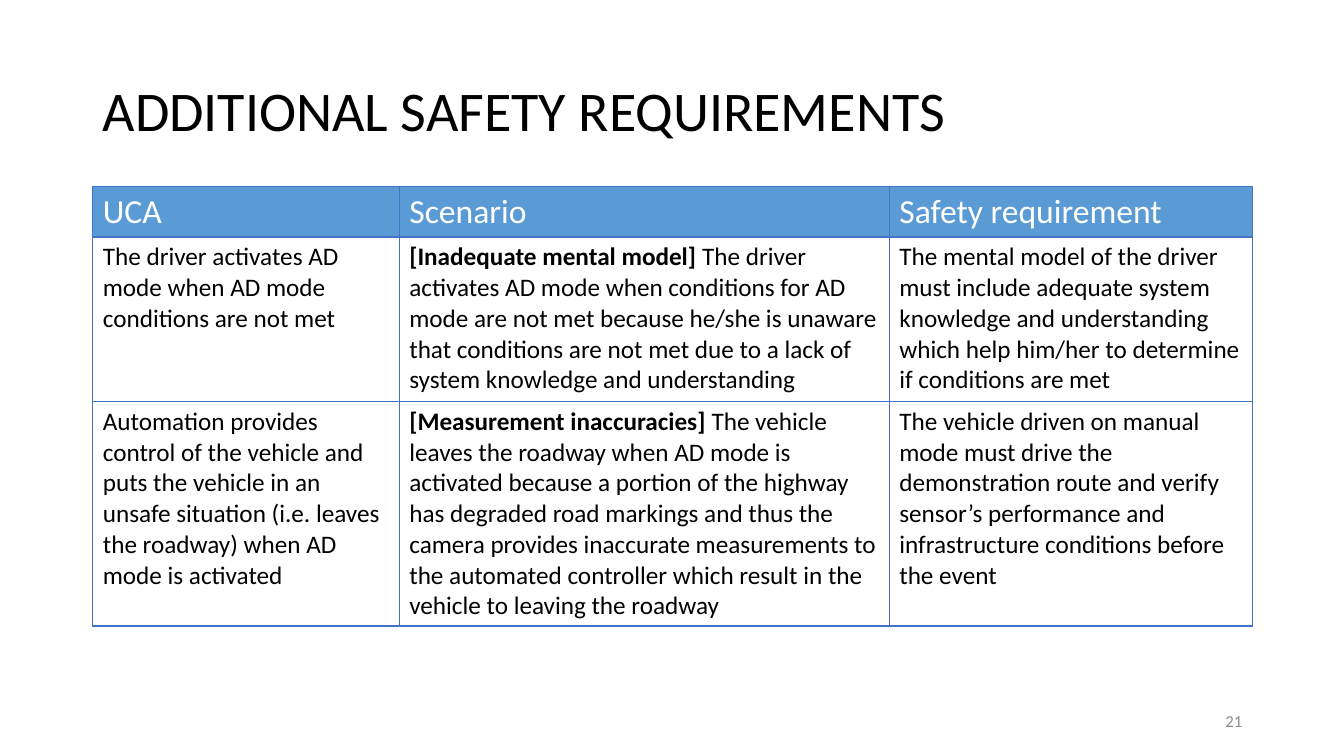
from lxml.etree import SubElement
from pptx import Presentation
from pptx.dml.color import RGBColor
from pptx.enum.text import MSO_ANCHOR, PP_ALIGN
from pptx.oxml.ns import qn
from pptx.util import Inches, Pt

TITLE = "ADDITIONAL SAFETY REQUIREMENTS"
PAGE_NUMBER = "21"
HEADINGS = ["UCA", "Scenario", "Safety requirement"]
# Each cell is a list of (text, bold) spans.
REQUIREMENTS = [
    [
        [("The driver activates AD mode when AD mode conditions are not met", False)],
        [("[Inadequate mental model] ", True),
         ("The driver activates AD mode when conditions for AD mode are not met because "
          "he/she is unaware that conditions are not met due to a lack of system knowledge "
          "and understanding", False)],
        [("The mental model of the driver must include adequate system knowledge and "
          "understanding which help him/her to determine if conditions are met", False)],
    ],
    [
        [("Automation provides control of the vehicle and puts the vehicle in an unsafe "
          "situation (i.e. leaves the roadway) when AD mode is activated", False)],
        [("[Measurement inaccuracies] ", True),
         ("The vehicle leaves the roadway when AD mode is activated because a portion of "
          "the highway has degraded road markings and thus the camera provides inaccurate "
          "measurements to the automated controller which result in the vehicle to leaving "
          "the roadway", False)],
        [("The vehicle driven on manual mode must drive the demonstration route and verify "
          "sensor’s performance and infrastructure conditions before the event", False)],
    ],
]
COLUMN_WIDTHS = [3.04, 4.86, 3.6]
ROW_HEIGHTS = [0.5, 1.63, 2.23]
LEFT, TABLE_TOP = 0.92, 1.85
FONT = "Calibri"
COLORS = {"text": "000000", "heading": "FFFFFF", "header": "5B9BD5",
          "border": "4472C4", "number": "8C8C8C"}


def add_spans(para, spans, size, color):
    for text, bold in spans:
        span = para.add_run()
        span.text = text
        span.font.name = FONT
        span.font.size = Pt(size)
        span.font.bold = bold
        span.font.color.rgb = RGBColor.from_string(COLORS[color])


def add_label(page, place, text, size, color):
    box = page.shapes.add_textbox(*(Inches(length) for length in place))
    frame = box.text_frame
    frame.word_wrap = True
    frame.vertical_anchor = MSO_ANCHOR.MIDDLE
    para = frame.paragraphs[0]
    add_spans(para, [(text, False)], size, color)
    return para


def set_borders(cell):
    """Draw all four cell borders; they must precede the fill in the XML."""
    properties = cell._tc.get_or_add_tcPr()
    for side in ("a:lnL", "a:lnR", "a:lnT", "a:lnB"):
        line = SubElement(properties, qn(side), w=str(Pt(1)))
        fill = SubElement(line, qn("a:solidFill"))
        SubElement(fill, qn("a:srgbClr"), val=COLORS["border"])


def add_requirements_table(page):
    rows = [[[(heading, False)] for heading in HEADINGS]] + REQUIREMENTS
    table = page.shapes.add_table(
        len(rows), len(HEADINGS), Inches(LEFT), Inches(TABLE_TOP),
        Inches(sum(COLUMN_WIDTHS)), Inches(sum(ROW_HEIGHTS))).table
    table.horz_banding = False
    for column, width in zip(table.columns, COLUMN_WIDTHS):
        column.width = Inches(width)
    for row, height in zip(table.rows, ROW_HEIGHTS):
        row.height = Inches(height)
    for row_index, row in enumerate(rows):
        for column_index, spans in enumerate(row):
            cell = table.cell(row_index, column_index)
            set_borders(cell)
            para = cell.text_frame.paragraphs[0]
            if row_index == 0:
                cell.fill.solid()
                cell.fill.fore_color.rgb = RGBColor.from_string(COLORS["header"])
                add_spans(para, spans, 24, "heading")
            else:
                cell.fill.background()
                add_spans(para, spans, 18, "text")


def main():
    deck = Presentation()
    deck.slide_width, deck.slide_height = Inches(13.33), Inches(7.5)
    page = deck.slides.add_slide(deck.slide_layouts[6])
    title = add_label(page, (LEFT, 0.4, 11.5, 1.45), TITLE, 40, "text")
    title.line_spacing = 0.9
    add_requirements_table(page)
    number = add_label(page, (9.42, 6.95, 3, 0.4), PAGE_NUMBER, 12, "number")
    number.alignment = PP_ALIGN.RIGHT
    deck.save("out.pptx")


if __name__ == "__main__":
    main()
